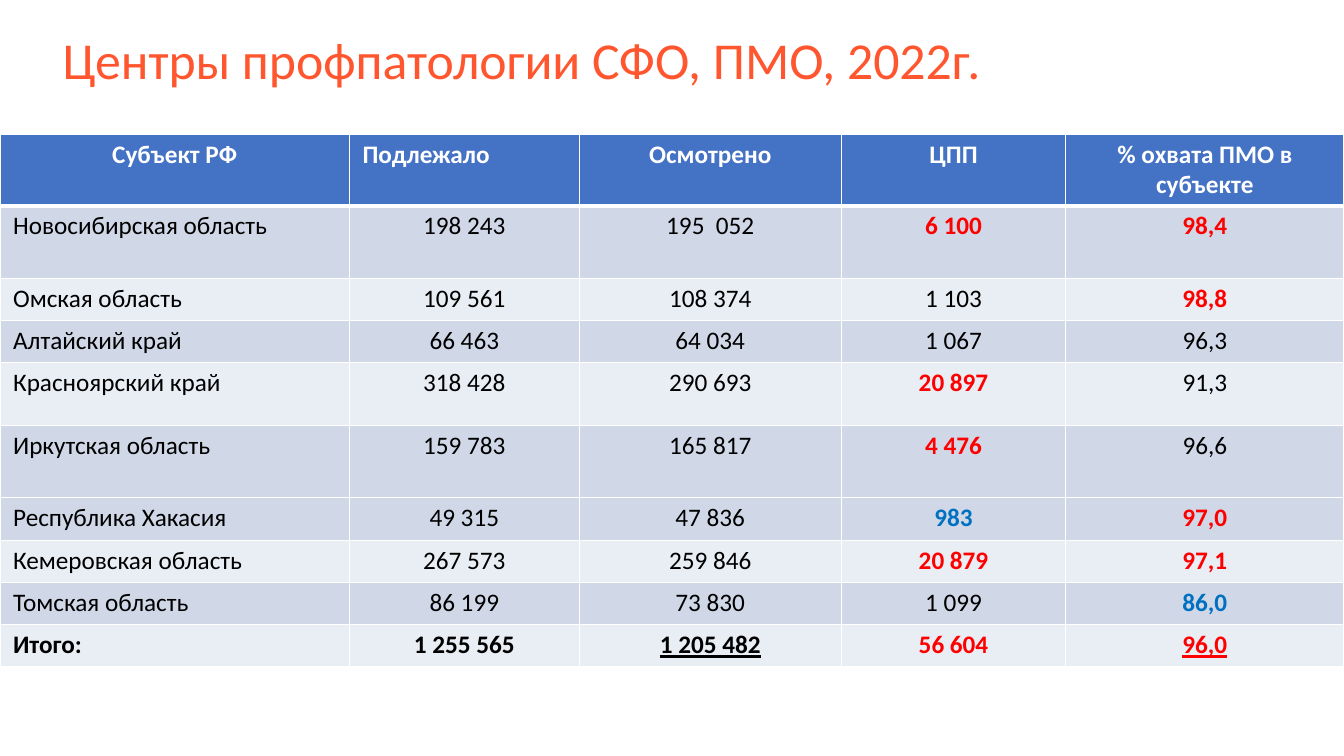
import pptx
import pptx.util
import pptx.dml.color
import pptx.enum.text
import lxml.etree
from dataclasses import dataclass
from pptx.oxml.ns import qn

TITLE = "Центры профпатологии СФО, ПМО, 2022г."
HEADINGS = ["Субъект РФ", "Подлежало", "Осмотрено", "ЦПП", "% охвата ПМО в субъекте"]
REGIONS = [
    ("Новосибирская область", "198 243", "195  052", "6 100", "98,4"),
    ("Омская область", "109 561", "108 374", "1 103", "98,8"),
    ("Алтайский край", "66 463", "64 034", "1 067", "96,3"),
    ("Красноярский край", "318 428", "290 693", "20 897", "91,3"),
    ("Иркутская область", "159 783", "165 817", "4 476", "96,6"),
    ("Республика Хакасия", "49 315", "47 836", "983", "97,0"),
    ("Кемеровская область", "267 573", "259 846", "20 879", "97,1"),
    ("Томская область", "86 199", "73 830", "1 099", "86,0"),
    ("Итого:", "1 255 565", "1 205 482", "56 604", "96,0"),
]
HIGH = {"6 100", "98,4", "98,8", "20 897", "4 476", "97,0", "20 879", "97,1", "56 604", "96,0"}
LOW = {"983", "86,0"}
UNDERLINED = {"1 205 482", "96,0"}

SLIDE_WIDTH, SLIDE_HEIGHT = 13.33, 7.5
COLUMN_SHARES = [0.26, 0.171, 0.195, 0.167, 0.207]
ROW_HEIGHT = 0.42
TALL_ROWS = {0: 0.7, 1: 0.72, 4: 0.62, 5: 0.72}
DARK_BANDS = {1, 3, 5, 6, 8}


@dataclass(frozen=True)
class Theme:
    font: str = "Calibri"
    title_size: int = 37
    table_size: int = 18
    title: str = "FF562F"
    header: str = "4472C4"
    dark_band: str = "D0D8E8"
    light_band: str = "E9EDF4"
    white: str = "FFFFFF"
    text: str = "000000"
    high: str = "FF0000"
    low: str = "0070C0"


THEME = Theme()
Inches = pptx.util.Inches
Align = pptx.enum.text.PP_ALIGN


def rgb(code):
    return pptx.dml.color.RGBColor.from_string(code)


def style(para, size, color, bold=False, underline=False):
    font = para.font
    font.name, font.size = THEME.font, pptx.util.Pt(size)
    font.bold, font.underline = bold, underline
    font.color.rgb = rgb(color)


def add_borders(cell, row):
    properties = cell._tc.get_or_add_tcPr()
    widths = {"lnL": 1, "lnR": 1, "lnT": 3 if row == 1 else 1, "lnB": 3 if row == 0 else 1}
    for side, width in widths.items():
        line = lxml.etree.SubElement(properties, qn("a:" + side), w=str(pptx.util.Pt(width)))
        fill = lxml.etree.SubElement(line, qn("a:solidFill"))
        lxml.etree.SubElement(fill, qn("a:srgbClr"), val=THEME.white)


def text_color(row, text):
    if row == 0:
        return THEME.white
    if text in HIGH:
        return THEME.high
    return THEME.low if text in LOW else THEME.text


def fill_cell(cell, row, column, text, last_row):
    add_borders(cell, row)
    band = THEME.dark_band if row in DARK_BANDS else THEME.light_band
    cell.fill.solid()
    cell.fill.fore_color.rgb = rgb(THEME.header if row == 0 else band)
    cell.margin_left = cell.margin_right = Inches(0.13)
    cell.margin_top = cell.margin_bottom = Inches(0.05)
    cell.text = text
    para = cell.text_frame.paragraphs[0]
    left = column == 1 if row == 0 else column == 0
    para.alignment = Align.LEFT if left else Align.CENTER
    bold = row in (0, last_row) or text in HIGH | LOW
    style(para, THEME.table_size, text_color(row, text), bold, text in UNDERLINED)


def add_title(page):
    box = page.shapes.title
    box.left, box.top, box.width, box.height = map(Inches, (0.52, 0, 12, 1.25))
    frame = box.text_frame
    frame.text = TITLE
    frame.auto_size = pptx.enum.text.MSO_AUTO_SIZE.NONE
    frame.vertical_anchor = pptx.enum.text.MSO_ANCHOR.MIDDLE
    para = frame.paragraphs[0]
    para.alignment, para.line_spacing = Align.LEFT, 0.9
    style(para, THEME.title_size, THEME.title)


def add_region_table(page):
    rows = [HEADINGS, *REGIONS]
    heights = [TALL_ROWS.get(row, ROW_HEIGHT) for row in range(len(rows))]
    table = page.shapes.add_table(
        len(rows), len(HEADINGS), 0, Inches(1.33), Inches(SLIDE_WIDTH), Inches(sum(heights))
    ).table
    for column, share in zip(table.columns, COLUMN_SHARES):
        column.width = Inches(SLIDE_WIDTH * share)
    for row, (texts, height) in enumerate(zip(rows, heights)):
        table.rows[row].height = Inches(height)
        for column, text in enumerate(texts):
            fill_cell(table.cell(row, column), row, column, text, len(rows) - 1)


def main():
    deck = pptx.Presentation()
    deck.slide_width, deck.slide_height = Inches(SLIDE_WIDTH), Inches(SLIDE_HEIGHT)
    page = deck.slides.add_slide(deck.slide_layouts.get_by_name("Title Only"))
    add_title(page)
    add_region_table(page)
    deck.save("out.pptx")


if __name__ == "__main__":
    main()
